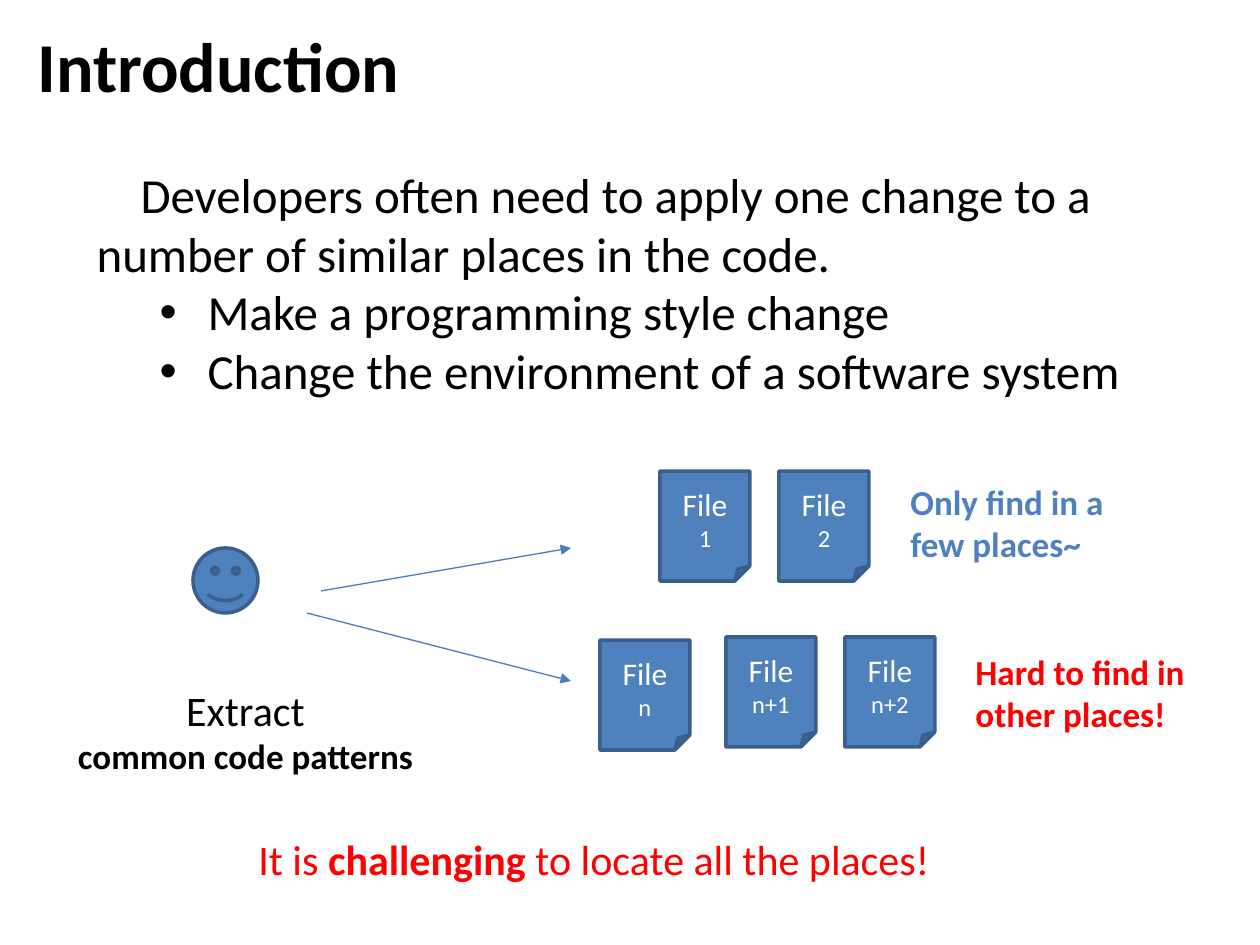
from lxml.etree import SubElement
from pptx import Presentation
from pptx.dml.color import RGBColor
from pptx.enum.shapes import MSO_CONNECTOR, MSO_SHAPE
from pptx.enum.text import MSO_ANCHOR, MSO_AUTO_SIZE, PP_ALIGN
from pptx.oxml.ns import qn
from pptx.util import Emu, Pt

BLUE, DARK_BLUE, ARROW_BLUE = "4F81BD", "3A5F8C", "4B7EBC"
BLACK, WHITE, RED = "000000", "FFFFFF", "FF0000"
color = RGBColor.from_string


def px(length):
    return Emu(round(length * 914400 / 126))


def write(shape, lines, hex_color, align=PP_ALIGN.LEFT, anchor=MSO_ANCHOR.TOP):
    frame = shape.text_frame
    frame.word_wrap = True
    frame.auto_size = MSO_AUTO_SIZE.NONE
    frame.vertical_anchor = anchor
    frame.text = "\n".join(text for text, size, bold in lines)
    for paragraph, (text, size, bold) in zip(frame.paragraphs, lines):
        paragraph.alignment = align
        paragraph.space_before = Pt(0)
        paragraph.font.name = "Calibri"
        paragraph.font.size = Pt(size)
        paragraph.font.bold = bold
        paragraph.font.color.rgb = color(hex_color)
    return frame.paragraphs


presentation = Presentation()
presentation.slide_width, presentation.slide_height = px(1260), px(945)
slide = presentation.slides.add_slide(presentation.slide_layouts[1])
shapes = slide.shapes

title, body = slide.placeholders
title.left, title.top, title.width, title.height = map(px, (25, 16, 456, 97))
write(title, [("Introduction", 40, True)], BLACK)

body.left, body.top, body.width, body.height = map(px, (84, 158, 1071, 251))
body_lines = [
    "Developers often need to apply one change to a number of similar places in the code.",
    "Make a programming style change",
    "Change the environment of a software system",
]
paragraphs = write(body, [(line, 28, False) for line in body_lines], BLACK)
for index, paragraph in enumerate(paragraphs):
    margin, indent, bullet = (111, -48, "•") if index else (0, 44, None)
    paragraph.level = 1 if bullet else 0
    properties = paragraph._p.get_or_add_pPr()
    properties.set("marL", str(px(margin)))
    properties.set("indent", str(px(indent)))
    default_font = properties.find(qn("a:defRPr"))
    if bullet:
        SubElement(properties, qn("a:buFont"), typeface="Arial")
        SubElement(properties, qn("a:buChar"), char=bullet)
    else:
        SubElement(properties, qn("a:buNone"))
    properties.append(default_font)

figures = [
    (MSO_SHAPE.FOLDED_CORNER, 660, 471, 90, 110, "1"),
    (MSO_SHAPE.FOLDED_CORNER, 779, 471, 90, 110, "2"),
    (MSO_SHAPE.FOLDED_CORNER, 600, 640, 90, 110, "n"),
    (MSO_SHAPE.FOLDED_CORNER, 726, 637, 90, 110, "n+1"),
    (MSO_SHAPE.FOLDED_CORNER, 845, 637, 90, 110, "n+2"),
    (MSO_SHAPE.SMILEY_FACE, 193, 548, 65, 65, None),
]
for kind, left, top, width, height, number in figures:
    figure = shapes.add_shape(kind, px(left), px(top), px(width), px(height))
    figure.shadow.inherit = False
    figure.fill.solid()
    figure.fill.fore_color.rgb = color(BLUE)
    figure.line.color.rgb = color(DARK_BLUE)
    figure.line.width = Pt(2)
    if number:
        file_lines = [("File", 18, False), (number, 14, False)]
        write(figure, file_lines, WHITE, PP_ALIGN.CENTER, MSO_ANCHOR.MIDDLE)

for ends in [(321, 591, 571, 548), (307, 613, 571, 681)]:
    arrow = shapes.add_connector(MSO_CONNECTOR.STRAIGHT, *map(px, ends))
    arrow.line.color.rgb = color(ARROW_BLUE)
    arrow.line.width = Pt(0.75)
    SubElement(arrow.line._get_or_add_ln(), qn("a:tailEnd"), type="triangle")
    SubElement(arrow._element.spPr, qn("a:effectLst"))

extract_lines = [("Extract", 24, False), ("common code patterns", 20, True)]
captions = [
    (898, 474, 238, 97, [("Only find in a few places~", 20, True)], BLUE, PP_ALIGN.LEFT),
    (963, 644, 286, 97, [("Hard to find in other places!", 20, True)], RED, PP_ALIGN.LEFT),
    (64, 678, 363, 106, extract_lines, BLACK, PP_ALIGN.CENTER),
]
for left, top, width, height, lines, hex_color, align in captions:
    caption = shapes.add_textbox(px(left), px(top), px(width), px(height))
    write(caption, lines, hex_color, align)

conclusion = shapes.add_textbox(px(246), px(827), px(699), px(63))
paragraph = write(conclusion, [("It is ", 24, False)], RED)[0]
for text, bold in [("challenging", True), (" to locate all the places!", False)]:
    run = paragraph.add_run()
    run.text = text
    run.font.bold = bold

presentation.save("out.pptx")
